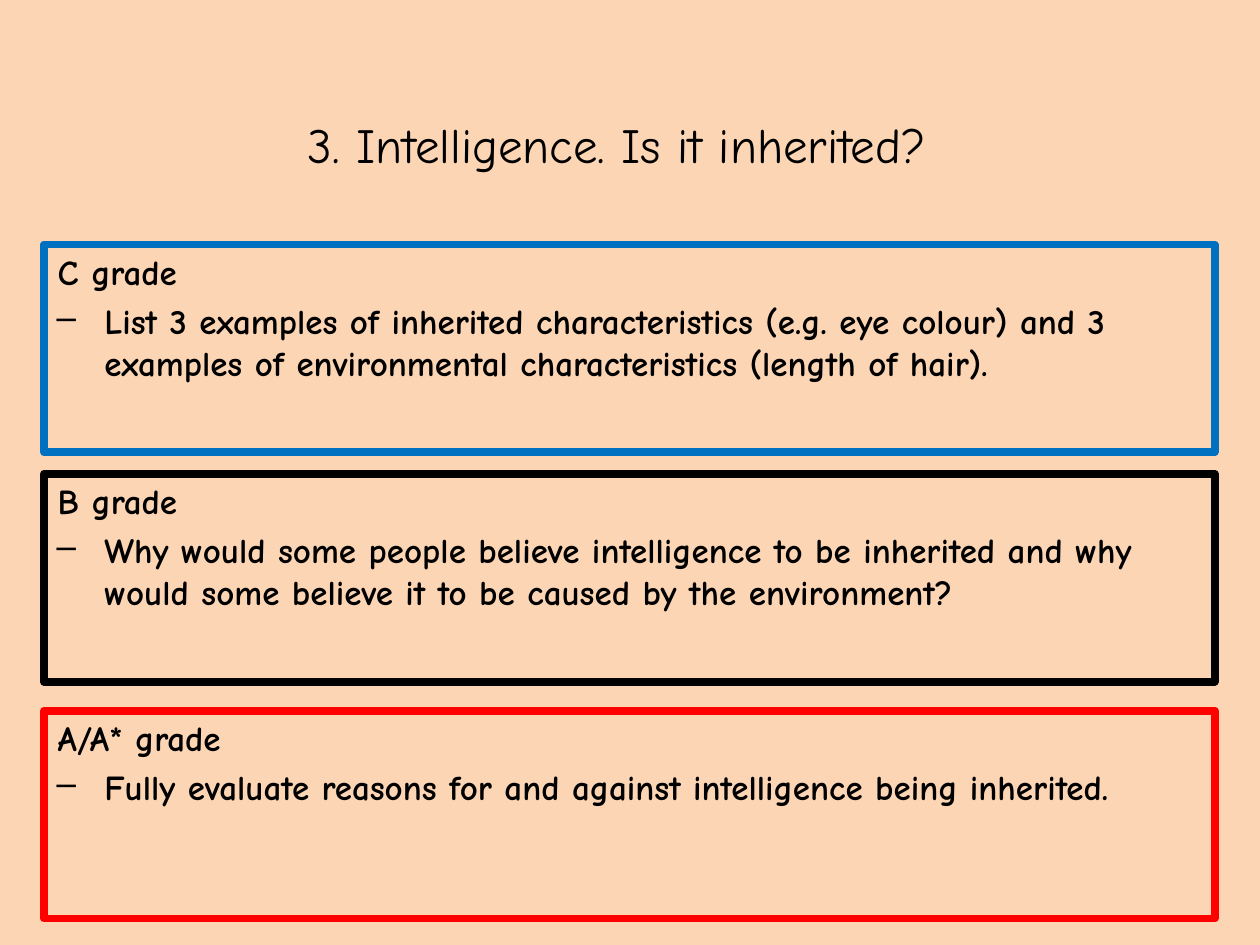
from dataclasses import dataclass

import lxml.etree
import pptx
import pptx.dml.color
import pptx.enum.shapes
import pptx.enum.text
import pptx.oxml.ns
import pptx.util
from pptx.util import Inches


@dataclass(frozen=True)
class Theme:
    font: str = "Comic Neue"
    background: str = "FCD5B5"
    text: str = "000000"
    c_grade: str = "0070C0"
    b_grade: str = "000000"
    a_grade: str = "FF0000"
    title_size: int = 28
    body_size: int = 20
    border_width: float = 4.5


theme = Theme()


def rgb(value):
    return pptx.dml.color.RGBColor.from_string(value)


def style_paragraph(paragraph, size, bold):
    paragraph.font.name = theme.font
    paragraph.font.size = pptx.util.Pt(size)
    paragraph.font.bold = bold
    paragraph.font.color.rgb = rgb(theme.text)


presentation = pptx.Presentation()
presentation.slide_width = Inches(10)
presentation.slide_height = Inches(7.5)
slide = presentation.slides.add_slide(presentation.slide_layouts[6])
slide.background.fill.solid()
slide.background.fill.fore_color.rgb = rgb(theme.background)

# Title
title = slide.shapes.add_textbox(Inches(0.28), Inches(0.52), Inches(9.23), Inches(1.25))
title.text_frame.word_wrap = True
title.text_frame.vertical_anchor = pptx.enum.text.MSO_ANCHOR.MIDDLE
question = title.text_frame.paragraphs[0]
question.text = "3. Intelligence. Is it inherited?"
question.alignment = pptx.enum.text.PP_ALIGN.CENTER
style_paragraph(question, theme.title_size, False)

# One framed task per grade
grades = [
    (1.94, theme.c_grade, "C grade",
     "List 3 examples of inherited characteristics (e.g. eye colour) and 3 "
     "examples of environmental characteristics (length of hair)."),
    (3.76, theme.b_grade, "B grade",
     "Why would some people believe intelligence to be inherited and why "
     "would some believe it to be caused by the environment?"),
    (5.64, theme.a_grade, "A/A* grade",
     "Fully evaluate reasons for and against intelligence being inherited."),
]
for top, border, grade, task in grades:
    frame = slide.shapes.add_shape(
        pptx.enum.shapes.MSO_SHAPE.RECTANGLE,
        Inches(0.35), Inches(top), Inches(9.29), Inches(1.65))
    frame.shadow.inherit = False
    frame.fill.background()
    frame.line.color.rgb = rgb(border)
    frame.line.width = pptx.util.Pt(theme.border_width)

    content = frame.text_frame
    content.word_wrap = True
    content.vertical_anchor = pptx.enum.text.MSO_ANCHOR.TOP
    heading = content.paragraphs[0]
    heading.text = grade
    objective = content.add_paragraph()
    objective.text = task

    for paragraph, margin, indent in ((heading, 0.01, 0), (objective, 0.38, -0.38)):
        style_paragraph(paragraph, theme.body_size, True)
        paragraph.level = 1
        paragraph.alignment = pptx.enum.text.PP_ALIGN.LEFT
        paragraph.space_before = pptx.util.Pt(0.2 * theme.body_size)
        properties = paragraph._p.get_or_add_pPr()
        properties.set("marL", str(Inches(margin)))
        properties.set("indent", str(Inches(indent)))

    # Dash bullet, placed ahead of the paragraph's default run properties
    dash = lxml.etree.Element(pptx.oxml.ns.qn("a:buChar"), char="–")
    objective._p.pPr.find(pptx.oxml.ns.qn("a:defRPr")).addprevious(dash)

presentation.save("out.pptx")
